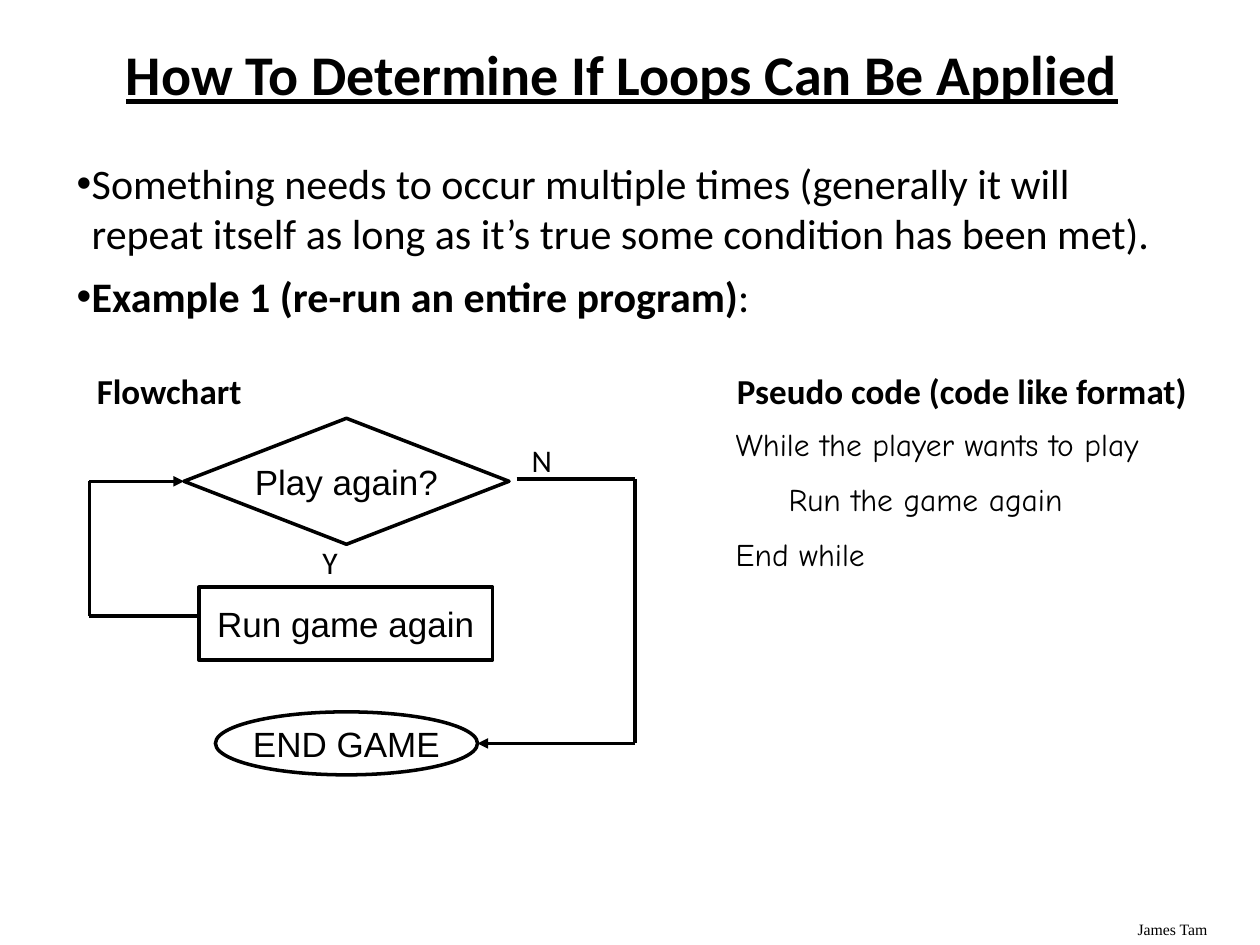
from dataclasses import dataclass
from itertools import pairwise

from lxml.etree import SubElement
from pptx import Presentation
from pptx.dml.color import RGBColor
from pptx.enum.shapes import MSO_CONNECTOR, MSO_SHAPE
from pptx.enum.text import MSO_ANCHOR, PP_ALIGN
from pptx.oxml.ns import qn
from pptx.util import Inches, Pt


@dataclass(frozen=True)
class Theme:
    """Colours, fonts, type sizes and line width of the slide."""
    ink: RGBColor = RGBColor(0, 0, 0)
    text: str = "Calibri"
    code: str = "Comic Neue"
    chart: str = "Arial"
    footer: str = "Times New Roman"
    title_size: int = 32
    body_size: int = 24
    head_size: int = 20
    note_size: int = 18
    footer_size: int = 9
    line: int = 2


class SlideBuilder:
    """Draws styled elements on the current slide."""

    def __init__(self, s, theme):
        """Keep the slide and its theme."""
        self.s = s
        self.theme = theme

    def run(self, p, text, **fmt):
        """Add a formatted run to a paragraph."""
        r = p.add_run()
        r.text = text
        size = fmt.pop("size")
        for name, value in {"name": self.theme.text, "size": Pt(size), **fmt}.items():
            setattr(r.font, name, value)
        r.font.color.rgb = self.theme.ink

    def title(self, text, box):
        """Place and fill the title placeholder."""
        sp = self.s.shapes.title
        for name, value in zip(("left", "top", "width", "height"), box):
            setattr(sp, name, Inches(value))
        tf = sp.text_frame
        tf.vertical_anchor = MSO_ANCHOR.MIDDLE
        p = tf.paragraphs[0]
        for name, value in {"alignment": PP_ALIGN.CENTER, "line_spacing": 0.9}.items():
            setattr(p, name, value)
        self.run(p, text, size=self.theme.title_size, bold=True, underline=True)

    def text(self, lines, box, before=0, bullet=False, **fmt):
        """Add a text box of (indent, runs) lines, each run a (text, bold) pair."""
        tf = self.s.shapes.add_textbox(*map(Inches, box)).text_frame
        tf.word_wrap = True
        for i, (indent, runs) in enumerate(lines):
            p = tf.add_paragraph() if i else tf.paragraphs[0]
            p.space_before = Pt(before)
            pPr = p._p.get_or_add_pPr()
            pPr.set("marL", str(Inches(indent)))
            if bullet:
                pPr.set("indent", str(-Inches(indent)))
                SubElement(pPr, qn("a:buFont")).set("typeface", "Arial")
                SubElement(pPr, qn("a:buChar")).set("char", "•")
            for text, bold in runs:
                self.run(p, text, bold=bold, **fmt)

    def label(self, text, box, bold=False, **fmt):
        """Add a text box of one line."""
        self.text([(0, [(text, bold)])], box, **fmt)

    def node(self, kind, text, box):
        """Add an outlined flowchart shape with centred text."""
        sp = self.s.shapes.add_shape(kind, *map(Inches, box))
        sp.shadow.inherit = False
        sp.fill.background()
        sp.line.color.rgb = self.theme.ink
        sp.line.width = Pt(self.theme.line)
        tf = sp.text_frame
        tf.word_wrap = False
        tf.vertical_anchor = MSO_ANCHOR.MIDDLE
        p = tf.paragraphs[0]
        p.alignment = PP_ALIGN.CENTER
        self.run(p, text, size=self.theme.head_size, name=self.theme.chart)
        return sp

    def route(self, points):
        """Join points by straight lines, with an arrowhead at the last one."""
        for start, end in pairwise(points):
            c = self.s.shapes.add_connector(MSO_CONNECTOR.STRAIGHT, *map(Inches, start + end))
            c.line.color.rgb = self.theme.ink
            c.line.width = Pt(self.theme.line)
            SubElement(c._element.spPr, qn("a:effectLst"))
        SubElement(c._element.spPr.find(qn("a:ln")), qn("a:tailEnd")).set("type", "triangle")
        return c


def main():
    """Build the slide and save it."""
    prs = Presentation()
    prs.slide_width, prs.slide_height = Inches(10), Inches(7.5)
    t = Theme()
    b = SlideBuilder(prs.slides.add_slide(prs.slide_layouts[5]), t)

    b.title("How To Determine If Loops Can Be Applied", (0.47, 0.33, 8.93, 0.57))
    b.text([
        (0.12, [("Something needs to occur multiple times (generally it will repeat itself "
                 "as long as it’s true some condition has been met).", False)]),
        (0.12, [("Example 1 (re-run an entire program)", True), (":", False)]),
    ], (0.51, 1.2, 8.94, 1.5), before=7, bullet=True, size=t.body_size)

    b.label("Flowchart", (0.67, 2.88, 4.52, 0.44), bold=True, size=t.head_size)
    b.label("Pseudo code (code like format)", (5.75, 2.88, 3.93, 0.44),
            bold=True, size=t.head_size)
    code = [(0, "While the player wants to play"), (0.42, "Run the game again"),
            (0, "End while")]
    b.text([(indent, [(text, False)]) for indent, text in code],
           (5.74, 3.32, 4.25, 1.31), before=10, size=t.note_size, name=t.code)

    decision = b.node(MSO_SHAPE.DIAMOND, "Play again?", (1.46, 3.32, 2.58, 1))
    b.node(MSO_SHAPE.RECTANGLE, "Run game again", (1.58, 4.66, 2.33, 0.58))
    b.node(MSO_SHAPE.OVAL, "END GAME", (1.71, 5.65, 2.08, 0.5))
    b.label("Y", (2.46, 4.26, 0.34, 0.4), before=9, size=t.note_size)
    b.label("N", (4.12, 3.45, 0.58, 0.4), before=9, size=t.note_size)

    loop = b.route([(1.58, 4.89), (0.71, 4.89), (0.71, 3.82), (1.46, 3.82)])
    loop.end_connect(decision, 1)
    b.route([(4.1, 3.8), (5.04, 3.8), (5.04, 5.9), (3.79, 5.9)])

    b.label("James Tam", (8.93, 7.25, 1, 0.25), size=t.footer_size, name=t.footer)
    prs.save("out.pptx")


if __name__ == "__main__":
    main()
